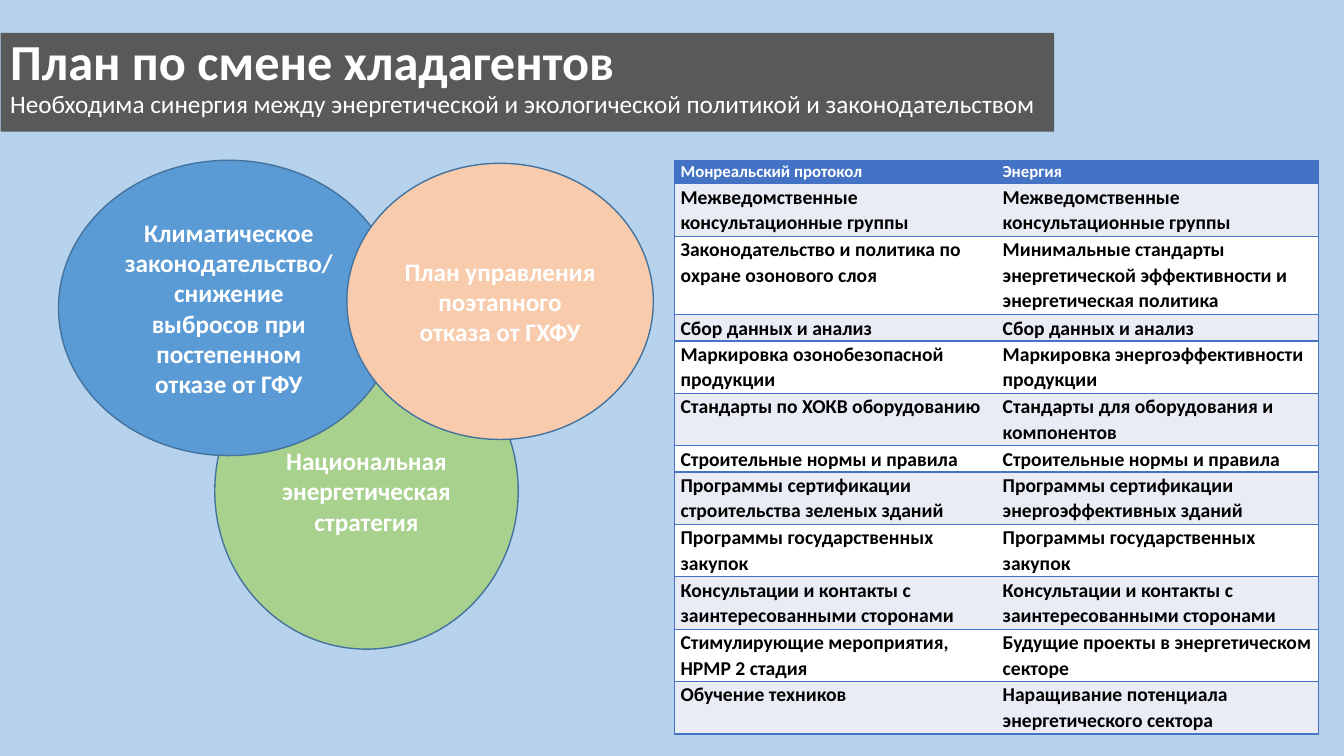
from lxml.etree import SubElement
from pptx import Presentation
from pptx.dml.color import RGBColor
from pptx.enum.shapes import MSO_SHAPE
from pptx.enum.text import MSO_ANCHOR, MSO_AUTO_SIZE, PP_ALIGN
from pptx.oxml.ns import qn
from pptx.util import Inches, Pt

WHITE = RGBColor(0xFF, 0xFF, 0xFF)
BLACK = RGBColor(0, 0, 0)
SKY = RGBColor(0xB6, 0xD2, 0xEC)
GRAY = RGBColor(0x59, 0x59, 0x59)
GREEN = RGBColor(0xA9, 0xD1, 0x8E)
BLUE = RGBColor(0x5B, 0x9B, 0xD5)
PEACH = RGBColor(0xF8, 0xCB, 0xAD)
OUTLINE = RGBColor(0x43, 0x73, 0x9E)
HEADER = RGBColor(0x44, 0x72, 0xC4)
BAND = RGBColor(0xE9, 0xEB, 0xF5)


def add_text(p, text, size, color=WHITE, bold=True):
    r = p.add_run()
    r.text = text
    for name, value in {"name": "Calibri", "size": Pt(size), "bold": bold}.items():
        setattr(r.font, name, value)
    r.font.color.rgb = color


def add_filled(kind, box, fill, line=None):
    sp = slide.shapes.add_shape(kind, *[Inches(v) for v in box])
    sp.shadow.inherit = False
    sp.fill.solid()
    sp.fill.fore_color.rgb = fill
    if line is None:
        sp.line.fill.background()
    else:
        sp.line.color.rgb = line
        sp.line.width = Pt(1)
    return sp


prs = Presentation()
prs.slide_width, prs.slide_height = Inches(13.33), Inches(7.5)
slide = prs.slides.add_slide(prs.slide_layouts[5])

# Backdrop and title band
add_filled(MSO_SHAPE.RECTANGLE, (0, 0, 13.33, 7.5), SKY)
band = add_filled(MSO_SHAPE.RECTANGLE, (4.74, -4.41, 0.98, 10.45), GRAY)
band.rotation = 270

# Title, brought in front of the band
title = slide.shapes.title
slide.shapes._spTree.append(title._element)
title.left, title.top = Inches(0), Inches(0.32)
title.width, title.height = Inches(12.23), Inches(0.51)
tf = title.text_frame
tf.word_wrap = True
tf.auto_size = MSO_AUTO_SIZE.NONE
tf.vertical_anchor = MSO_ANCHOR.TOP
add_text(tf.paragraphs[0], "План по смене хладагентов", 36)
add_text(tf.add_paragraph(), "Необходима синергия между энергетической и экологической "
         "политикой и законодательством", 18, bold=False)
for p in tf.paragraphs:
    p.alignment = PP_ALIGN.LEFT
    p.line_spacing = 0.9
    p.space_before = Pt(0)

# Overlapping policy circles
circles = [
    ((2.13, 3.3, 3.01, 3.14), GREEN, "Национальная энергетическая стратегия"),
    ((0.58, 1.59, 3.38, 2.93), BLUE, "Климатическое законодательство/ снижение "
     "выбросов при постепенном отказе от ГФУ"),
    ((3.44, 1.62, 3.04, 2.74), PEACH, "План управления поэтапного отказа от ГХФУ"),
]
for box, fill, text in circles:
    sp = add_filled(MSO_SHAPE.OVAL, box, fill, OUTLINE)
    tf = sp.text_frame
    tf.word_wrap = True
    tf.vertical_anchor = MSO_ANCHOR.MIDDLE
    p = tf.paragraphs[0]
    p.alignment = PP_ALIGN.CENTER
    add_text(p, text, 18)

# Table: protocol measures beside energy measures, with lines of text per row
rows = [
    ("Монреальский протокол", "Энергия", 0.9),
    ("Межведомственные консультационные группы",
     "Межведомственные консультационные группы", 2),
    ("Законодательство и политика по охране озонового слоя",
     "Минимальные стандарты энергетической эффективности и энергетическая политика", 3),
    ("Сбор данных и анализ", "Сбор данных и анализ", 1),
    ("Маркировка озонобезопасной продукции",
     "Маркировка энергоэффективности продукции", 2),
    ("Стандарты по ХОКВ оборудованию",
     "Стандарты для оборудования и компонентов", 2),
    ("Строительные нормы и правила", "Строительные нормы и правила", 1),
    ("Программы сертификации строительства зеленых зданий",
     "Программы сертификации энергоэффективных зданий", 2),
    ("Программы государственных закупок", "Программы государственных закупок", 2),
    ("Консультации и контакты с заинтересованными сторонами",
     "Консультации и контакты с заинтересованными сторонами", 2),
    ("Стимулирующие мероприятия, НРМР 2 стадия",
     "Будущие проекты в энергетическом секторе", 2),
    ("Обучение техников", "Наращивание потенциала энергетического сектора", 2),
]
table = slide.shapes.add_table(len(rows), 2, Inches(6.69), Inches(1.59),
                               Inches(6.39), Inches(5.69)).table
table.horz_banding = False
for col in table.columns:
    col.width = Inches(3.195)
for i, (*texts, lines) in enumerate(rows):
    table.rows[i].height = Inches(0.26 * lines)
    for j, text in enumerate(texts):
        cell = table.cell(i, j)
        # Borders all round, except between the two columns
        tcPr = cell._tc.get_or_add_tcPr()
        inner = "lnR" if j == 0 else "lnL"
        for side in ("lnL", "lnR", "lnT", "lnB"):
            ln = SubElement(tcPr, qn(f"a:{side}"), w=str(Pt(1)))
            if side == inner:
                SubElement(ln, qn("a:noFill"))
            else:
                fill = SubElement(ln, qn("a:solidFill"))
                SubElement(fill, qn("a:srgbClr"), val=str(HEADER))
        cell.fill.solid()
        cell.fill.fore_color.rgb = HEADER if i == 0 else BAND if i % 2 else WHITE
        cell.margin_left = cell.margin_right = Inches(0.06)
        cell.margin_top = cell.margin_bottom = 0
        p = cell.text_frame.paragraphs[0]
        p.line_spacing = 1.07
        add_text(p, text, 14 if i else 12, BLACK if i else WHITE)

prs.save("out.pptx")
